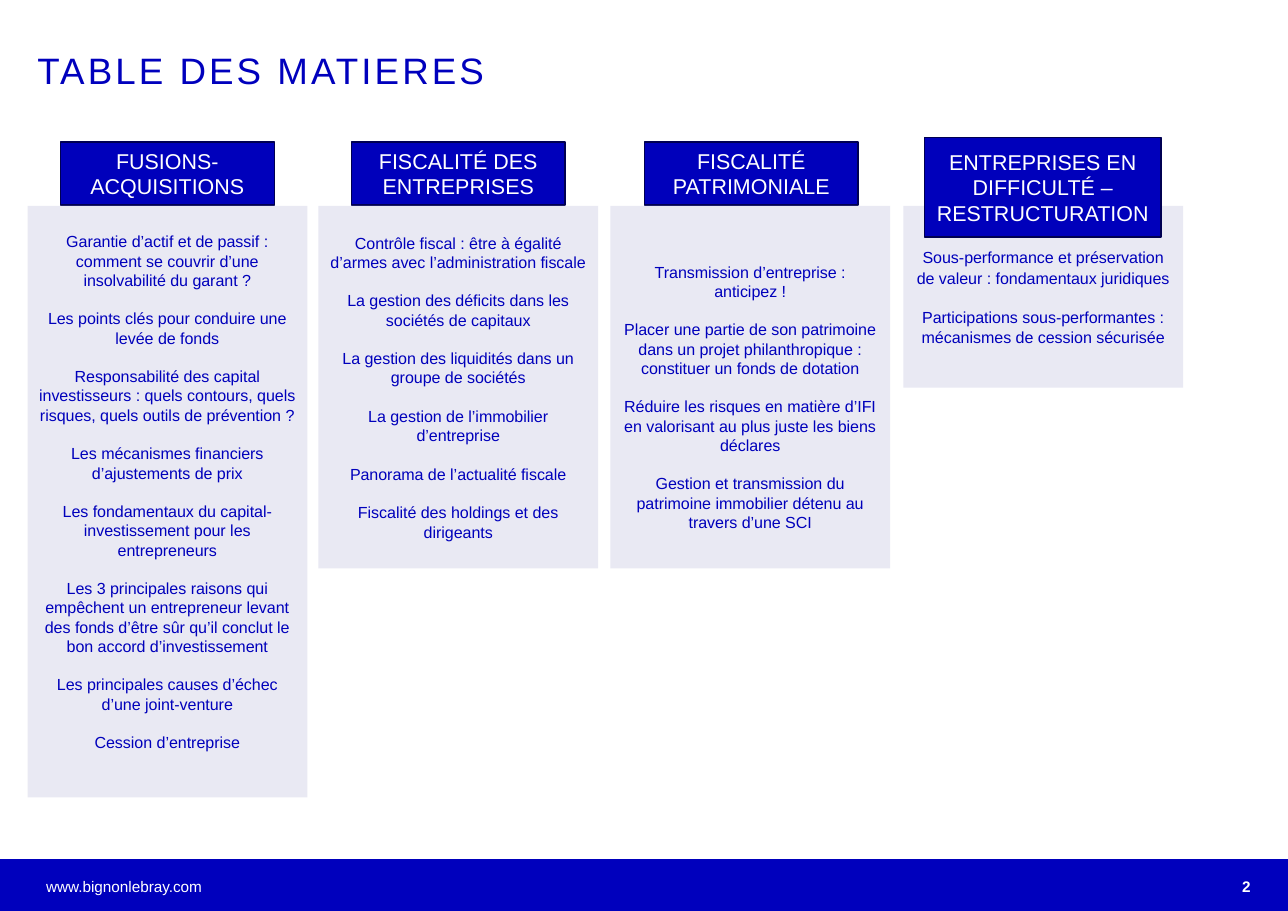
from dataclasses import dataclass

from pptx import Presentation
from pptx.dml.color import RGBColor
from pptx.enum.shapes import MSO_SHAPE
from pptx.enum.text import MSO_ANCHOR, PP_ALIGN
from pptx.shapes.autoshape import Shape
from pptx.slide import Slide
from pptx.util import Pt

PAGE_WIDTH, PAGE_HEIGHT = 841.68, 595.44
FOOTER_TOP = 561.6
PANEL_TOP, PANEL_WIDTH = 134.6, 182.9
BLANK_LINE = 12.6

TITLE_BLUE = RGBColor(0x00, 0x00, 0xBD)
BLUE = RGBColor(0x00, 0x00, 0xBB)
NAVY = RGBColor(0x00, 0x00, 0x52)
PALE = RGBColor(0xE9, 0xE9, 0xF3)
WHITE = RGBColor(0xFF, 0xFF, 0xFF)

HEADING_FONT = {"name": "Arial", "size": Pt(14)}
TOPIC_FONT = {"name": "Arial", "size": Pt(10.5)}
FOOTER_FONT = {"name": "Arial", "size": Pt(10)}
TITLE_FONT = {"name": "Arial", "size": Pt(24)}
NO_INSETS = dict.fromkeys(
    ("margin_left", "margin_top", "margin_right", "margin_bottom"), Pt(0))


@dataclass(frozen=True)
class Area:
    left: float
    top: float
    width: float
    height: float

    def lengths(self) -> tuple[Pt, Pt, Pt, Pt]:
        return Pt(self.left), Pt(self.top), Pt(self.width), Pt(self.height)


@dataclass(frozen=True)
class Column:
    heading: str
    heading_area: Area
    left: float
    height: float
    topics: tuple[str, ...]
    gap: float = BLANK_LINE
    line_spacing: float = 1.0
    extra_top: float = 0
    extra_bottom: float = 0
    heading_in_front: bool = False


COLUMNS = (
    Column("FUSIONS-ACQUISITIONS", Area(39.6, 92.9, 139.7, 41), 18, 386.6, (
        "Garantie d’actif et de passif : comment se couvrir d’une insolvabilité du garant ?",
        "Les points clés pour conduire une levée de fonds",
        "Responsabilité des capital investisseurs : quels contours, quels risques, "
        "quels outils de prévention ?",
        "Les mécanismes financiers d’ajustements de prix",
        "Les fondamentaux du capital-investissement pour les entrepreneurs",
        "Les 3 principales raisons qui empêchent un entrepreneur levant des fonds "
        "d’être sûr qu’il conclut le bon accord d’investissement",
        "Les principales causes d’échec d’une joint-venture",
        "Cession d’entreprise",
    ), extra_bottom=BLANK_LINE),
    Column("FISCALITÉ DES ENTREPRISES", Area(229.7, 92.9, 139.7, 41), 208.1, 236.9, (
        "Contrôle fiscal : être à égalité d’armes avec l’administration fiscale",
        "La gestion des déficits dans les sociétés de capitaux",
        "La gestion des liquidités dans un groupe de sociétés",
        "La gestion de l’immobilier d’entreprise",
        "Panorama de l’actualité fiscale",
        "Fiscalité des holdings et des dirigeants",
    )),
    Column("FISCALITÉ PATRIMONIALE", Area(421.2, 92.9, 139.7, 41), 398.9, 236.9, (
        "Transmission d’entreprise : anticipez !",
        "Placer une partie de son patrimoine dans un projet philanthropique : "
        "constituer un fonds de dotation",
        "Réduire les risques en matière d’IFI en valorisant au plus juste les biens déclares",
        "Gestion et transmission du patrimoine immobilier détenu au travers d’une SCI",
    ), extra_top=BLANK_LINE),
    Column("ENTREPRISES EN DIFFICULTÉ – RESTRUCTURATION",
           Area(604.1, 90, 154.8, 64.8), 590.4, 118.8, (
               "Sous-performance et préservation de valeur : fondamentaux juridiques",
               "Participations sous-performantes : mécanismes de cession sécurisée",
           ), gap=12, line_spacing=1.07, heading_in_front=True),
)


def apply(target: object, values: dict) -> None:
    for name, value in values.items():
        setattr(target, name, value)


def write(box: Shape, texts: tuple[str, ...], font: dict, color: RGBColor,
          frame_format: dict, para_format: dict, gap: float = 0) -> None:
    frame = box.text_frame
    apply(frame, {"word_wrap": True, **frame_format})
    for index, text in enumerate(texts):
        para = frame.add_paragraph() if index else frame.paragraphs[0]
        apply(para, para_format)
        if index:
            para.space_before = Pt(gap)
        span = para.add_run()
        span.text = text
        apply(span.font, font)
        span.font.color.rgb = color


def add_rectangle(page: Slide, area: Area, fill: RGBColor,
                  outline: RGBColor | None = None) -> Shape:
    box = page.shapes.add_shape(MSO_SHAPE.RECTANGLE, *area.lengths())
    box.shadow.inherit = False
    box.fill.solid()
    box.fill.fore_color.rgb = fill
    if outline is None:
        box.line.fill.background()
    else:
        box.line.color.rgb = outline
        box.line.width = Pt(1)
    return box


def add_label(page: Slide, area: Area, text: str, font: dict, color: RGBColor,
              para_format: dict, anchor: MSO_ANCHOR = MSO_ANCHOR.TOP) -> Shape:
    box = page.shapes.add_textbox(*area.lengths())
    write(box, (text,), font, color,
          {**NO_INSETS, "vertical_anchor": anchor}, para_format)
    return box


def add_heading(page: Slide, column: Column) -> None:
    box = add_rectangle(page, column.heading_area, BLUE, NAVY)
    write(box, (column.heading,), HEADING_FONT, WHITE,
          {"vertical_anchor": MSO_ANCHOR.MIDDLE}, {"alignment": PP_ALIGN.CENTER})


def add_panel(page: Slide, column: Column) -> None:
    area = Area(column.left, PANEL_TOP, PANEL_WIDTH, column.height)
    write(add_rectangle(page, area, PALE), column.topics, TOPIC_FONT, BLUE,
          {"vertical_anchor": MSO_ANCHOR.MIDDLE,
           "margin_top": Pt(3.6 + column.extra_top),
           "margin_bottom": Pt(3.6 + column.extra_bottom)},
          {"alignment": PP_ALIGN.CENTER, "line_spacing": column.line_spacing},
          column.gap)


def add_column(page: Slide, column: Column) -> None:
    parts = [add_heading, add_panel]
    if column.heading_in_front:
        parts.reverse()
    for add_part in parts:
        add_part(page, column)


def main() -> None:
    deck = Presentation()
    deck.slide_width, deck.slide_height = Pt(PAGE_WIDTH), Pt(PAGE_HEIGHT)
    page = deck.slides.add_slide(deck.slide_layouts[6])

    # Footer band, web address and page number
    add_rectangle(page, Area(0, FOOTER_TOP, PAGE_WIDTH, PAGE_HEIGHT - FOOTER_TOP), TITLE_BLUE)
    add_label(page, Area(30.2, 573.1, 284.4, 8.6), "www.bignonlebray.com",
              FOOTER_FONT, WHITE, {"alignment": PP_ALIGN.LEFT})
    add_label(page, Area(627.8, 573.1, 189.4, 12.2), "2",
              {**FOOTER_FONT, "bold": True}, WHITE, {"alignment": PP_ALIGN.RIGHT})

    # Title with wide letter spacing
    title = add_label(page, Area(24.5, 34.6, 792.7, 25.2), "TABLE DES MATIERES",
                      TITLE_FONT, TITLE_BLUE, {"line_spacing": Pt(25)}, MSO_ANCHOR.BOTTOM)
    span = title.text_frame.paragraphs[0].runs[0]
    span._r.get_or_add_rPr().set("spc", "200")

    # Columns of topics
    for column in COLUMNS:
        add_column(page, column)

    deck.save("out.pptx")


if __name__ == "__main__":
    main()
